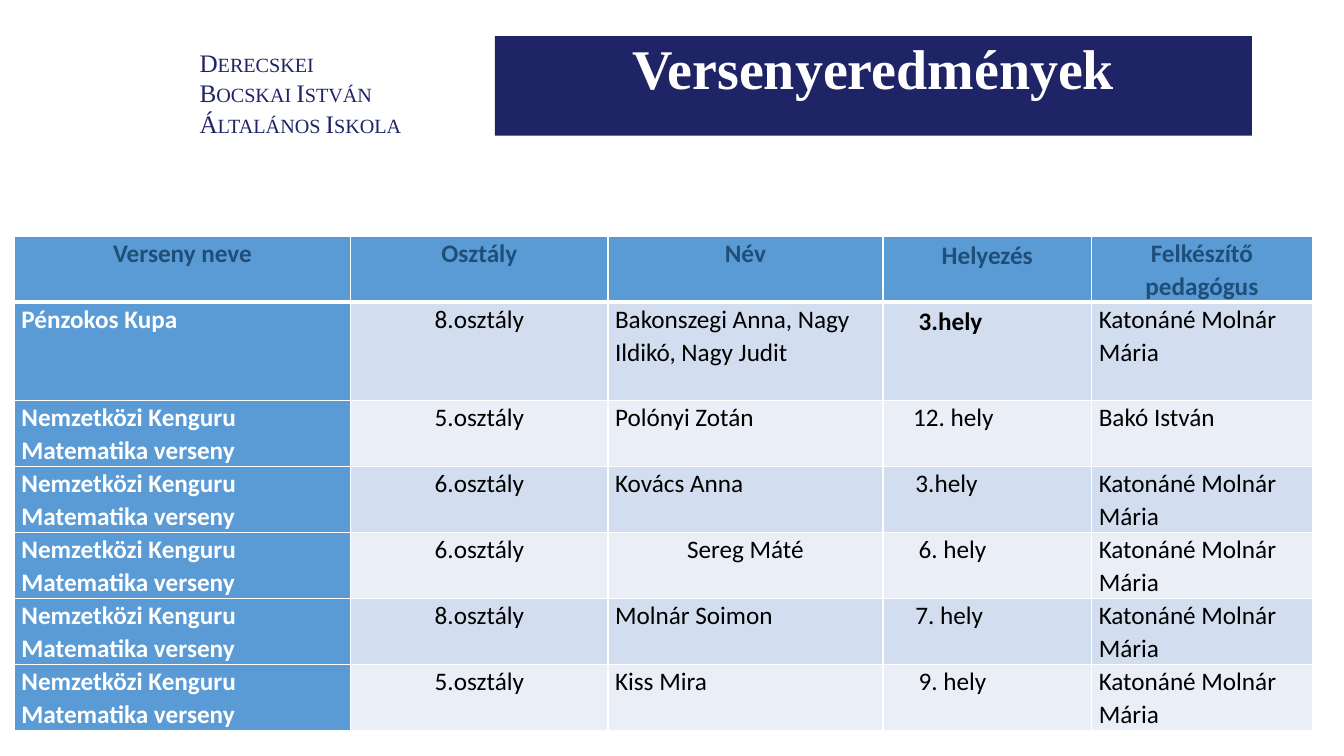
from lxml import etree
from pptx import Presentation
from pptx.dml.color import RGBColor
from pptx.enum.shapes import MSO_SHAPE
from pptx.enum.text import MSO_ANCHOR, PP_ALIGN
from pptx.oxml.ns import qn
from pptx.util import Cm, Pt

LEFT, CENTER = PP_ALIGN.LEFT, PP_ALIGN.CENTER
TOP = MSO_ANCHOR.TOP
RECTANGLE = MSO_SHAPE.RECTANGLE

COLORS = {
    "navy": "1F2466",
    "header": "5B9BD5",
    "header_text": "1F4E79",
    "band_dark": "D2DEEF",
    "band_light": "EAEFF7",
    "white": "FFFFFF",
    "black": "000000",
}
SERIF, SANS = "Times New Roman", "Calibri"

SCHOOL = ["Derecskei", "Bocskai István", "Általános Iskola"]
HEADERS = ["Verseny neve", "Osztály", "Név", "Helyezés", "Felkészítő pedagógus"]
KANGAROO = "Nemzetközi Kenguru Matematika verseny"
TEACHER = "Katonáné Molnár Mária"
RESULTS = [
    ["Pénzokos Kupa", "8.osztály", "Bakonszegi Anna, Nagy Ildikó, Nagy Judit", "3.hely", TEACHER],
    [KANGAROO, "5.osztály", "Polónyi Zotán", "12. hely", "Bakó István"],
    [KANGAROO, "6.osztály", "Kovács Anna", "3.hely", TEACHER],
    [KANGAROO, "6.osztály", "Sereg Máté", "6. hely", TEACHER],
    [KANGAROO, "8.osztály", "Molnár Soimon", "7. hely", TEACHER],
    [KANGAROO, "5.osztály", "Kiss Mira", "9. hely", TEACHER],
]
PLACE_INDENTS = [0.72, 0.58, 0.64, 0.72, 0.64, 0.72]
COL_WIDTHS = [8.48, 6.48, 6.93, 5.26, 5.56]
ROW_HEIGHTS = [1.66, 2.49] + [1.66] * 5
CONTEST, CLASS, NAME, PLACE = range(4)


def rgb(name):
    return RGBColor.from_string(COLORS[name])


def write(p, text, font=SANS, size=18, color="black", bold=False, align=LEFT,
          spacing=1.0, before=0, indent=0, small_caps=False):
    p.alignment = align
    p.line_spacing = spacing
    p.space_before = Pt(before)
    if indent:
        p._p.get_or_add_pPr().set("marL", str(Cm(indent)))
    r = p.add_run()
    r.text = text
    r.font.name = font
    r.font.size = Pt(size)
    r.font.bold = bold
    r.font.color.rgb = rgb(color)
    if small_caps:
        r.font._element.set("cap", "small")


def set_borders(cell, **widths):
    """Draw white borders; the keys are L, R, T and B, the values points."""
    tc_pr = cell._tc.get_or_add_tcPr()
    for side, width in widths.items():
        ln = etree.SubElement(tc_pr, qn(f"a:ln{side}"), w=str(Pt(width)))
        fill = etree.SubElement(ln, qn("a:solidFill"))
        etree.SubElement(fill, qn("a:srgbClr"), val=COLORS["white"])


class ResultsSlide:
    def __init__(self, prs):
        self.slide = prs.slides.add_slide(prs.slide_layouts[6])

    def text_box(self, lines, x, y, w, h, **style):
        sp = self.slide.shapes.add_textbox(Cm(x), Cm(y), Cm(w), Cm(h))
        tf = sp.text_frame
        tf.word_wrap = True
        for i, line in enumerate(lines):
            p = tf.add_paragraph() if i else tf.paragraphs[0]
            write(p, line, **style)

    def banner(self, text, x, y, w, h, fill, **style):
        sp = self.slide.shapes.add_shape(RECTANGLE, Cm(x), Cm(y), Cm(w), Cm(h))
        sp.shadow.inherit = False
        sp.fill.solid()
        sp.fill.fore_color.rgb = rgb(fill)
        sp.line.fill.background()
        tf = sp.text_frame
        tf.word_wrap = True
        tf.vertical_anchor = TOP
        write(tf.paragraphs[0], text, **style)

    def table(self, rows, x, y, widths, heights):
        table = self.slide.shapes.add_table(
            len(rows), len(widths), Cm(x), Cm(y),
            Cm(sum(widths)), Cm(sum(heights))).table
        for col, width in zip(table.columns, widths):
            col.width = Cm(width)
        for row, height in zip(table.rows, heights):
            row.height = Cm(height)
        for i, values in enumerate(rows):
            for j, value in enumerate(values):
                self.cell(table.cell(i, j), i, j, value)

    def cell(self, cell, i, j, text):
        cell.margin_left = cell.margin_right = Cm(0.18)
        cell.margin_top = cell.margin_bottom = 0
        set_borders(cell, L=1, R=1, T=3 if i == 1 else 1, B=3 if i == 0 else 1)
        style = {"spacing": 1.15 if j == PLACE and i < 2 else 1.07}
        if i == 0:
            fill = "header"
            style.update(color="header_text", bold=True, align=CENTER)
        elif j == CONTEST:
            fill = "header"
            style.update(color="white", bold=True)
        else:
            fill = "band_dark" if i % 2 else "band_light"
            if j == CLASS or (j == NAME and text == "Sereg Máté"):
                style.update(align=CENTER)
            elif j == PLACE:
                style.update(indent=PLACE_INDENTS[i - 1], bold=i == 1)
        cell.fill.solid()
        cell.fill.fore_color.rgb = rgb(fill)
        write(cell.text_frame.paragraphs[0], text, **style)


def main():
    prs = Presentation()
    prs.slide_width, prs.slide_height = Cm(33.87), Cm(19.05)
    s = ResultsSlide(prs)
    s.text_box(SCHOOL, 4.78, 1.07, 16.94, 3.33,
               font=SERIF, color="navy", small_caps=True)
    s.banner("Versenyeredmények", 12.47, 0.91, 19.08, 2.51, "navy", font=SERIF,
             size=40, color="white", bold=True, align=CENTER, spacing=0.9, before=10)
    s.table([HEADERS] + RESULTS, 0.36, 5.95, COL_WIDTHS, ROW_HEIGHTS)
    prs.save("out.pptx")


if __name__ == "__main__":
    main()
